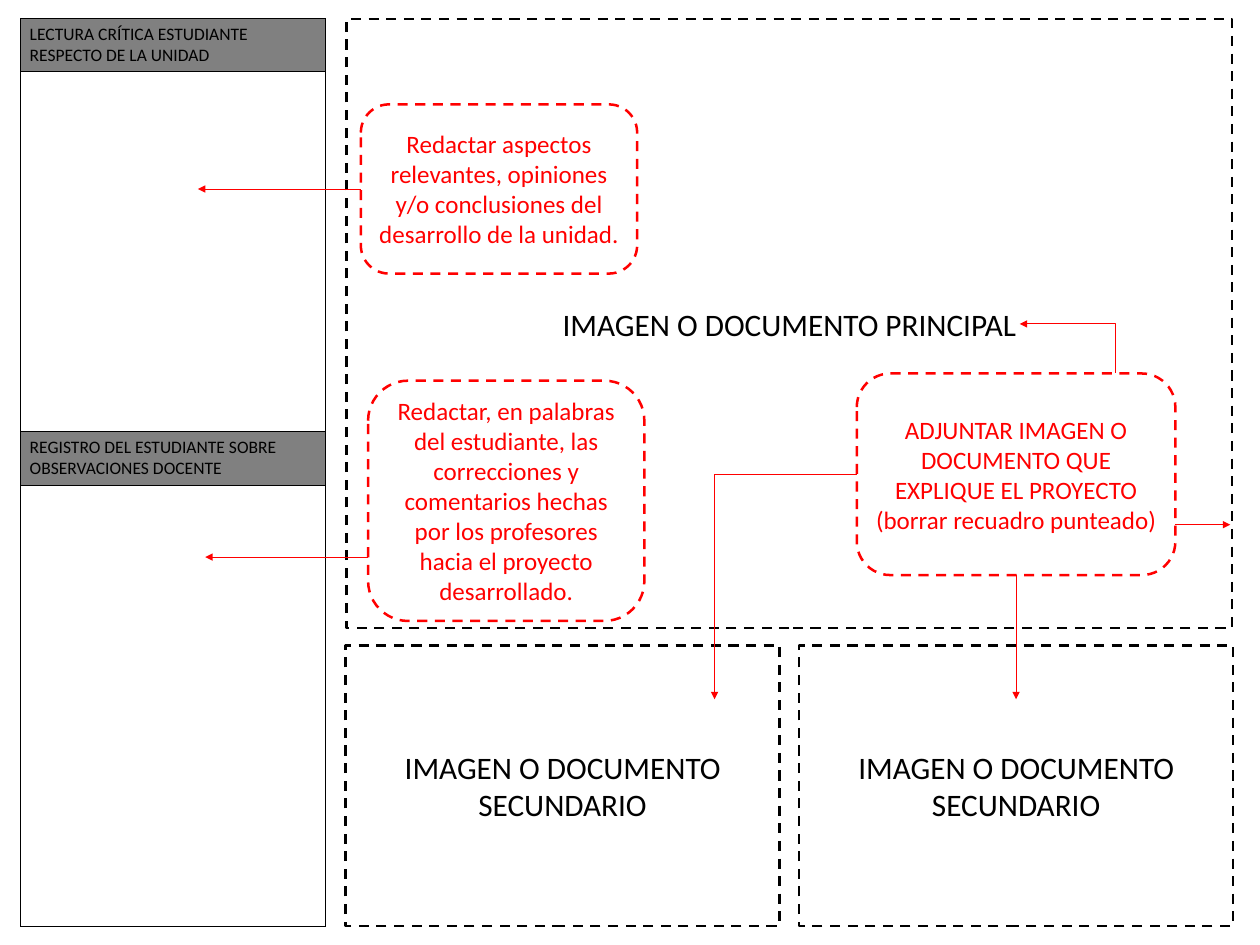
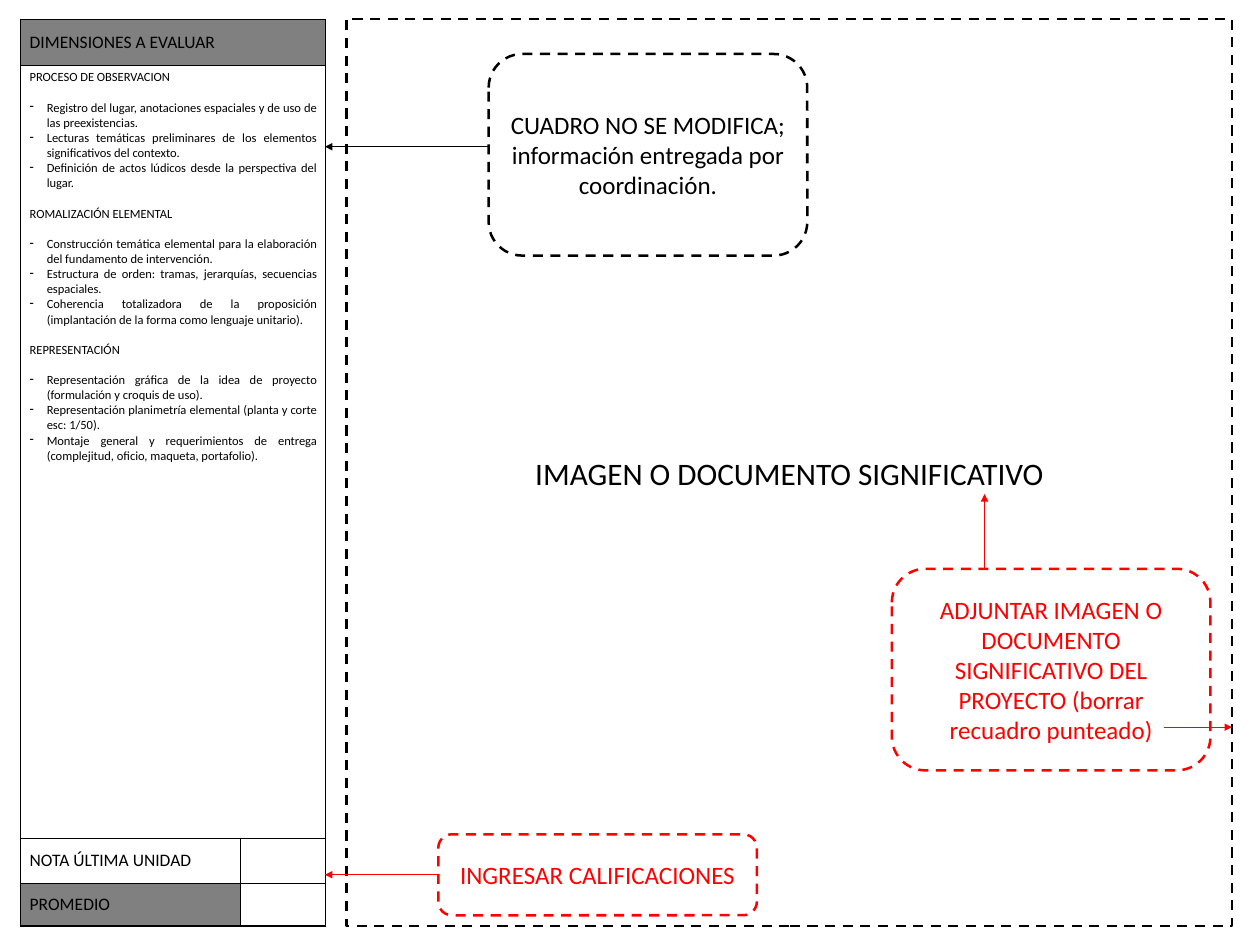
from lxml import etree
from pptx import Presentation
from pptx.dml.color import RGBColor
from pptx.enum.dml import MSO_LINE
from pptx.enum.shapes import MSO_CONNECTOR, MSO_SHAPE
from pptx.enum.text import MSO_ANCHOR, PP_ALIGN
from pptx.oxml.ns import qn
from pptx.util import Inches, Pt

RECT, ROUND = MSO_SHAPE.RECTANGLE, MSO_SHAPE.ROUNDED_RECTANGLE
STRAIGHT, ELBOW = MSO_CONNECTOR.STRAIGHT, MSO_CONNECTOR.ELBOW
DASH = MSO_LINE.DASH
TOP, MIDDLE = MSO_ANCHOR.TOP, MSO_ANCHOR.MIDDLE
LEFT, CENTER, JUSTIFY = PP_ALIGN.LEFT, PP_ALIGN.CENTER, PP_ALIGN.JUSTIFY

COLORS = {"black": "000000", "red": "FF0000", "gray": "808080", "white": "FFFFFF"}
FONT = "Calibri"
SIZES = {RECT: 25, ROUND: 20}
SIDE_X, SIDE_Y = 0.23, 0.21


def rgb(name):
    return RGBColor.from_string(COLORS[name])


def style(frame, size, color, align):
    for para in frame.paragraphs:
        para.alignment = align
        for run in para.runs:
            run.font.name = FONT
            run.font.size = Pt(size)
            run.font.color.rgb = rgb(color)


TOPICS = {
    "PROCESO DE OBSERVACION": [
        "Registro del lugar, anotaciones espaciales y de uso de las preexistencias.",
        "Lecturas temáticas preliminares de los elementos significativos del contexto.",
        "Definición de actos lúdicos desde la perspectiva del lugar.",
    ],
    "ROMALIZACIÓN ELEMENTAL": [
        "Construcción temática elemental para la elaboración del fundamento de intervención.",
        "Estructura de orden: tramas, jerarquías, secuencias espaciales.",
        "Coherencia totalizadora de la proposición (implantación de la forma como lenguaje unitario).",
    ],
    "REPRESENTACIÓN": [
        "Representación gráfica de la idea de proyecto (formulación y croquis de uso).",
        "Representación planimetría elemental (planta y corte esc: 1/50).",
        "Montaje general y requerimientos de entrega (complejitud, oficio, maqueta, portafolio).",
    ],
}

# Boxes: shape, color, place, text
# Arrows: color, width, start, end, (box, side) joined at the start
PAGES = [
    {
        "cols": [3.39],
        "rows": [0.58, 4.01, 0.59, 4.9],
        "text": {
            (0, 0): "LECTURA CRÍTICA ESTUDIANTE RESPECTO DE LA UNIDAD",
            (2, 0): "REGISTRO DEL ESTUDIANTE SOBRE OBSERVACIONES DOCENTE",
        },
        "gray": [(0, 0), (2, 0)],
        "merged": [],
        "thin": {},
        "anchor": TOP,
        "align": LEFT,
        "boxes": [
            (RECT, "black", (3.85, 0.21, 9.84, 6.77), "IMAGEN O DOCUMENTO PRINCIPAL"),
            (RECT, "black", (3.84, 7.17, 4.82, 3.12), "IMAGEN O DOCUMENTO SECUNDARIO"),
            (RECT, "black", (8.88, 7.17, 4.82, 3.12), "IMAGEN O DOCUMENTO SECUNDARIO"),
            (ROUND, "red", (9.52, 4.15, 3.54, 2.24),
             "ADJUNTAR IMAGEN O DOCUMENTO QUE EXPLIQUE EL PROYECTO (borrar recuadro punteado)"),
            (ROUND, "red", (4.01, 1.16, 3.07, 1.88),
             "Redactar aspectos relevantes, opiniones y/o conclusiones del desarrollo de la unidad."),
            (ROUND, "red", (4.09, 4.23, 3.07, 2.67),
             "Redactar, en palabras del estudiante, las correcciones y comentarios hechas "
             "por los profesores hacia el proyecto desarrollado."),
        ],
        "arrows": [
            ("red", 0.75, (13.06, 5.83), (13.67, 5.83), None),
            ("red", 0.75, (11.29, 6.39), (11.29, 7.77), (3, 2)),
            ("red", 0.75, (4.01, 2.1), (2.2, 2.1), (4, 1)),
            ("red", 0.75, (4.09, 6.19), (2.28, 6.19), None),
        ],
        # Start, end and turn in degrees of each one-corner arrow
        "bends": [
            ((11.59, 4.4), (12.13, 3.34), 270),
            ((9.52, 5.27), (7.94, 7.77), 0),
        ],
    },
    {
        "cols": [2.44, 0.95],
        "rows": [0.52, 8.59, 0.49, 0.48],
        "text": {
            (0, 0): "DIMENSIONES A EVALUAR",
            (2, 0): "NOTA ÚLTIMA UNIDAD",
            (3, 0): "PROMEDIO",
        },
        "gray": [(0, 0), (3, 0)],
        "merged": [0, 1],
        "thin": {
            "lnL": [(2, 1), (3, 1)],
            "lnR": [(2, 0), (3, 0)],
            "lnT": [(0, 0), (0, 1), (3, 0), (3, 1)],
            "lnB": [(2, 0), (2, 1)],
        },
        "anchor": MIDDLE,
        "align": JUSTIFY,
        "boxes": [
            (RECT, "black", (3.85, 0.21, 9.84, 10.08), "IMAGEN O DOCUMENTO SIGNIFICATIVO"),
            (ROUND, "red", (9.91, 6.32, 3.54, 2.24),
             "ADJUNTAR IMAGEN O DOCUMENTO SIGNIFICATIVO DEL PROYECTO (borrar recuadro punteado)"),
            (ROUND, "black", (5.43, 0.6, 3.54, 2.24),
             "CUADRO NO SE MODIFICA; información entregada por coordinación."),
            (ROUND, "red", (4.87, 9.27, 3.54, 0.9), "INGRESAR CALIFICACIONES"),
        ],
        "arrows": [
            ("red", 0.75, (12.93, 8.08), (13.69, 8.08), None),
            ("black", 1, (5.43, 1.63), (3.61, 1.63), None),
            ("red", 0.75, (10.94, 6.32), (10.94, 5.49), None),
            ("red", 0.75, (4.87, 9.72), (3.61, 9.72), (3, 1)),
        ],
        "bends": [],
    },
]

deck = Presentation()
deck.slide_width, deck.slide_height = Inches(14), Inches(10.5)

for page in PAGES:
    slide = deck.slides.add_slide(deck.slide_layouts[6])

    # Side table
    cols, rows = page["cols"], page["rows"]
    grid = slide.shapes.add_table(
        len(rows), len(cols), Inches(SIDE_X), Inches(SIDE_Y),
        Inches(sum(cols)), Inches(sum(rows))).table
    grid.first_row = grid.horz_banding = False
    for col, width in zip(grid.columns, cols):
        col.width = Inches(width)
    for row, height in zip(grid.rows, rows):
        row.height = Inches(height)
    for r in range(len(rows)):
        for c in range(len(cols)):
            cell = grid.cell(r, c)
            cell.text_frame.text = page["text"].get((r, c), "")
            cell.vertical_anchor = page["anchor"]
            style(cell.text_frame, 14, "black", page["align"])
            props = cell._tc.get_or_add_tcPr()
            for side in ("lnL", "lnR", "lnT", "lnB"):
                thin = (r, c) in page["thin"].get(side, [])
                edge = etree.SubElement(props, qn("a:" + side), w=str(Pt(0.5 if thin else 1)))
                fill = etree.SubElement(edge, qn("a:solidFill"))
                etree.SubElement(fill, qn("a:srgbClr"), val=COLORS["black"])
            cell.fill.solid()
            cell.fill.fore_color.rgb = rgb("gray" if (r, c) in page["gray"] else "white")
    for r in page["merged"]:
        grid.cell(r, 0).merge(grid.cell(r, len(cols) - 1))

    # Frames and notes
    boxes = []
    for kind, color, place, text in page["boxes"]:
        box = slide.shapes.add_shape(kind, *map(Inches, place))
        box.shadow.inherit = False
        box.fill.background()
        box.line.color.rgb = rgb(color)
        box.line.width = Pt(2)
        box.line.dash_style = DASH
        box.text_frame.word_wrap = True
        box.text_frame.vertical_anchor = MIDDLE
        box.text_frame.text = text
        style(box.text_frame, SIZES[kind], color, CENTER)
        boxes.append(box)

    # Arrows
    lines = []
    for color, width, start, end, joint in page["arrows"]:
        line = slide.shapes.add_connector(STRAIGHT, *map(Inches, start + end))
        if joint:
            line.begin_connect(boxes[joint[0]], joint[1])
        lines.append((line, color, width))
    for start, end, turn in page["bends"]:
        line = slide.shapes.add_connector(ELBOW, *map(Inches, start + end))
        props = line._element.spPr
        props.find(qn("a:prstGeom")).set("prst", "bentConnector2")
        props.find(qn("a:xfrm")).set("rot", str(turn * 60000))
        lines.append((line, "red", 0.75))
    for line, color, width in lines:
        line.line.color.rgb = rgb(color)
        line.line.width = Pt(width)
        etree.SubElement(line.line._get_or_add_ln(), qn("a:tailEnd"), type="triangle")
        etree.SubElement(line._element.spPr, qn("a:effectLst"))

# Topics in the tall cell of the last table
cell = grid.cell(1, 0)
cell.vertical_anchor = TOP
frame = cell.text_frame
for topic, points in TOPICS.items():
    first = not frame.text
    head = frame.paragraphs[0] if first else frame.add_paragraph()
    head.text = topic
    head.space_before = Pt(0 if first else 12)
    head.space_after = Pt(12)
    for point in points:
        para = frame.add_paragraph()
        para.text = point
        props = para._p.get_or_add_pPr()
        props.set("marL", str(Inches(0.19)))
        props.set("indent", str(-Inches(0.19)))
        etree.SubElement(props, qn("a:buChar"), char="-")
style(frame, 10, "black", JUSTIFY)

deck.save("out.pptx")
